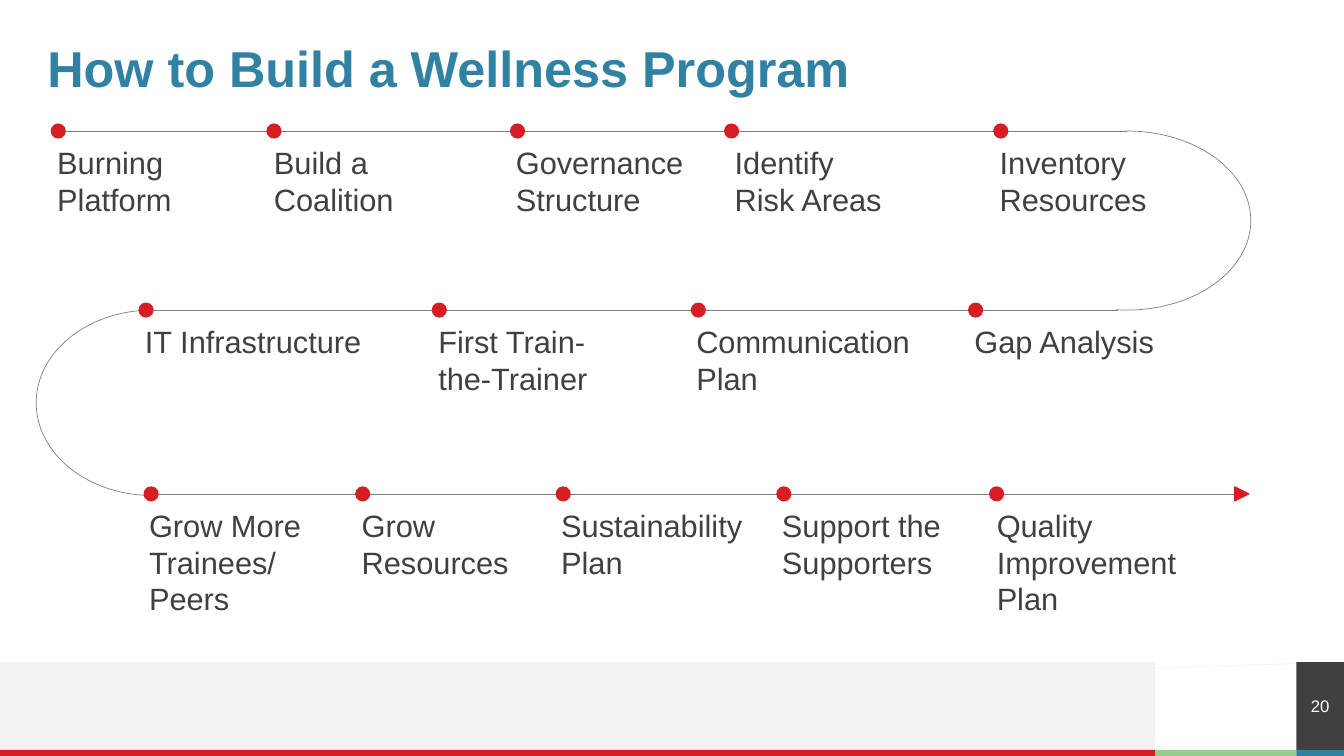
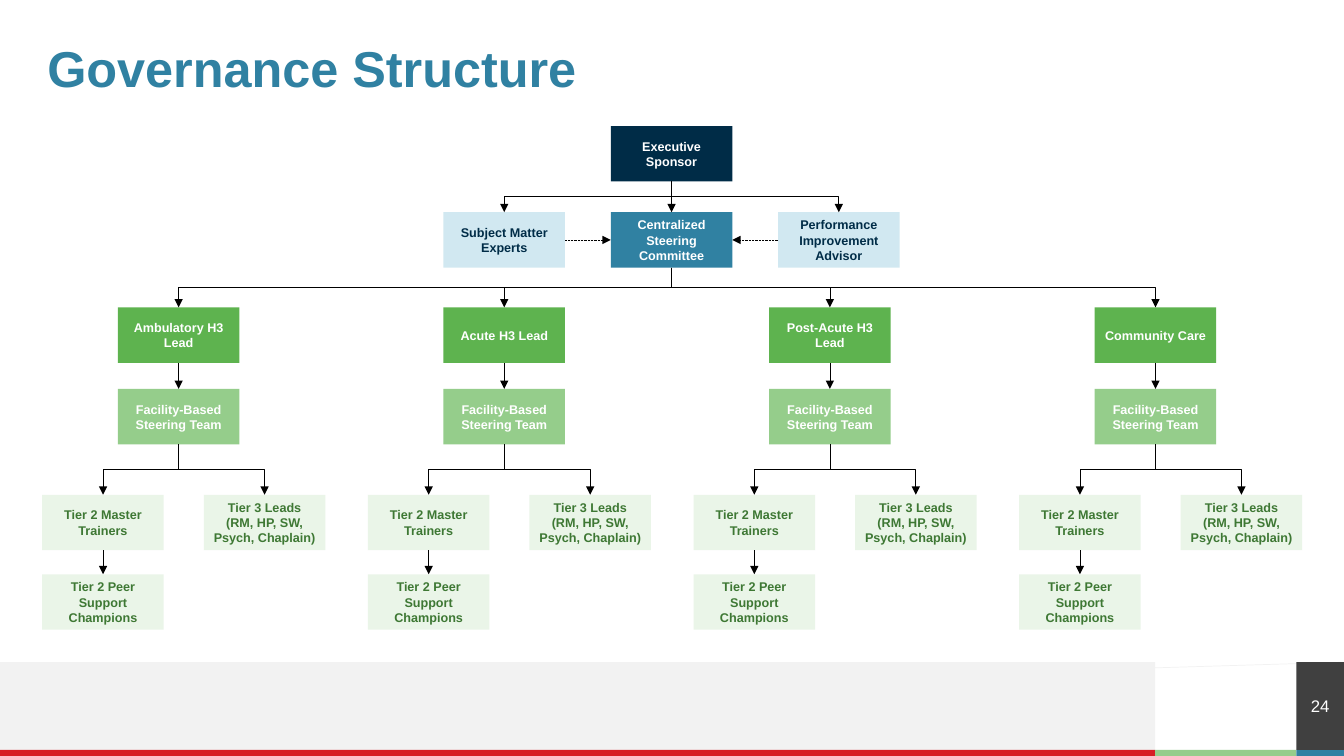
"""Builds the wellness programme roadmap and governance slides."""
from lxml.etree import SubElement
from pptx import Presentation
from pptx.dml.color import RGBColor
from pptx.enum.dml import MSO_LINE
from pptx.enum.shapes import MSO_CONNECTOR, MSO_SHAPE
from pptx.enum.text import MSO_ANCHOR, PP_ALIGN
from pptx.oxml.ns import qn
from pptx.util import Pt

FONT = "Arial"
WHITE = RGBColor(0xFF, 0xFF, 0xFF)
BLACK = RGBColor(0x00, 0x00, 0x00)
CHARCOAL = RGBColor(0x40, 0x40, 0x40)
GREY = RGBColor(0x80, 0x80, 0x80)
PALE_GREY = RGBColor(0xF2, 0xF2, 0xF2)
RED = RGBColor(0xD7, 0x1D, 0x24)
NAVY = RGBColor(0x00, 0x2C, 0x47)
BLUE = RGBColor(0x30, 0x81, 0xA2)
PALE_BLUE = RGBColor(0xD1, 0xE8, 0xF1)
GREEN = RGBColor(0x5E, 0xB3, 0x4F)
LIGHT_GREEN = RGBColor(0x95, 0xCD, 0x8B)
PALE_GREEN = RGBColor(0xEA, 0xF5, 0xE8)
DARK_GREEN = RGBColor(0x3E, 0x78, 0x34)

SLIDE_WIDTH, SLIDE_HEIGHT = 960, 540
FOOTER_TOP, STRIPE_TOP = 473, 535.7
FOOTER_SPLIT, NUMBER_LEFT = 825.1, 925.9

DOT_SIZE = 9.8
LABEL_DROP = 5.3
ROADMAP = [
    (93.6, [
        (36.7, 33.8, 195, "Burning\nPlatform"),
        (190.8, 188.6, 146, "Build a Coalition"),
        (364.8, 361.4, 171, "Governance Structure"),
        (517.7, 517.7, 131, "Identify\nRisk Areas"),
        (710, 707, 195, "Inventory\nResources"),
    ]),
    (221.5, [
        (99.4, 96.5, 197, "IT Infrastructure"),
        (308.9, 306, 127, "First Train-the-Trainer"),
        (493.9, 490.3, 172, "Communication\nPlan"),
        (692, 689, 176, "Gap Analysis"),
    ]),
    (352.8, [
        (103, 99.4, 124, "Grow More\nTrainees/ Peers"),
        (254.2, 251.3, 158, "Grow Resources"),
        (397.4, 393.8, 161, "Sustainability Plan"),
        (555, 551.5, 147, "Support the Supporters"),
        (707, 704.9, 156, "Quality Improvement Plan"),
    ]),
]

UNIT_WIDTH, UNIT_HEIGHT = 86.8, 39.6
SPONSOR_LEFT, ADVISOR_STEP = 436.3, 119.5
FIRST_BRANCH, BRANCH_STEP = 84.2, 232.6
SPONSOR_TOP, STEERING_TOP = 90, 151.6
LEAD_TOP, TEAM_TOP, TIER_TOP, PEER_TOP = 219.6, 277.8, 353.4, 410.2
TRAINER_SHIFT, TIER3_SHIFT = -54, 61.4
LEADS = ["Ambulatory H3 Lead", "Acute H3 Lead", "Post-Acute H3 Lead", "Community Care"]


def add_block(slide, left, top, width, height, fill, outline=None, preset=MSO_SHAPE.RECTANGLE):
    """Adds a flat preset shape."""
    block = slide.shapes.add_shape(preset, Pt(left), Pt(top), Pt(width), Pt(height))
    block.shadow.inherit = False
    if fill is None:
        block.fill.background()
    else:
        block.fill.solid()
        block.fill.fore_color.rgb = fill
    if outline is None:
        block.line.fill.background()
    else:
        block.line.color.rgb = outline
        block.line.width = Pt(1)
    return block


def write(frame, text, size, color, bold=False, align=PP_ALIGN.LEFT):
    """Fills a text frame and formats its paragraphs."""
    frame.word_wrap = True
    frame.text = text
    for paragraph in frame.paragraphs:
        paragraph.alignment = align
        for run in paragraph.runs:
            run.font.name = FONT
            run.font.size = Pt(size)
            run.font.bold = bold
            run.font.color.rgb = color


def clear_margins(frame):
    """Removes the insets and centres the text vertically."""
    frame.margin_left = frame.margin_right = frame.margin_top = frame.margin_bottom = 0
    frame.vertical_anchor = MSO_ANCHOR.MIDDLE


def style_line(connector, color):
    """Makes a connector thin and free of shadow."""
    connector.line.color.rgb = color
    connector.line.width = Pt(0.5)
    SubElement(connector.element.spPr, qn("a:effectLst"))


def add_line(slide, x1, y1, x2, y2, color):
    """Draws a plain straight line."""
    line = slide.shapes.add_connector(MSO_CONNECTOR.STRAIGHT, Pt(x1), Pt(y1), Pt(x2), Pt(y2))
    style_line(line, color)


def add_arc(slide, left, top, width, height, start, end, mirrored=False):
    """Draws an arc between two angles in degrees."""
    arc = add_block(slide, left, top, width, height, None, GREY, MSO_SHAPE.ARC)
    arc.line.width = Pt(0.5)
    arc.adjustments[0] = start * 0.6
    arc.adjustments[1] = end * 0.6
    if mirrored:
        arc.element.spPr.find(qn("a:xfrm")).set("flipH", "1")


def start_slide(deck, title, number):
    """Adds a slide with its title, footer bands and number."""
    slide = deck.slides.add_slide(deck.slide_layouts[6])
    stripe_height = SLIDE_HEIGHT - STRIPE_TOP
    footer_height = STRIPE_TOP - FOOTER_TOP
    edges = [0, FOOTER_SPLIT, NUMBER_LEFT, SLIDE_WIDTH]
    add_block(slide, 0, FOOTER_TOP, FOOTER_SPLIT, footer_height, PALE_GREY)
    for left, right, color in zip(edges, edges[1:], [RED, LIGHT_GREEN, BLUE]):
        add_block(slide, left, STRIPE_TOP, right - left, stripe_height, color)
    add_line(slide, SLIDE_WIDTH, FOOTER_TOP, 0, 501.8, PALE_GREY)

    page = add_block(slide, NUMBER_LEFT, FOOTER_TOP, SLIDE_WIDTH - NUMBER_LEFT, footer_height, CHARCOAL)
    clear_margins(page.text_frame)
    write(page.text_frame, str(number), 12, WHITE, align=PP_ALIGN.CENTER)

    heading = slide.shapes.add_textbox(Pt(33.8), Pt(33.8), Pt(892), Pt(33.8)).text_frame
    clear_margins(heading)
    write(heading, title, 36, BLUE, bold=True)
    heading.paragraphs[0].line_spacing = 0.9
    return slide


def add_step(slide, line_y, dot_left, label_left, label_width, label):
    """Adds a roadmap dot and the label under it."""
    add_block(slide, dot_left, line_y - DOT_SIZE / 2, DOT_SIZE, DOT_SIZE, RED, RED, MSO_SHAPE.OVAL)
    height = 60.5
    caption = slide.shapes.add_textbox(Pt(label_left), Pt(line_y + LABEL_DROP), Pt(label_width), Pt(height))
    write(caption.text_frame, label, 22, CHARCOAL)


def add_unit(slide, left, top, label, fill, color=WHITE):
    """Adds one box of the organisation chart."""
    unit = add_block(slide, left, top, UNIT_WIDTH, UNIT_HEIGHT, fill)
    unit.text_frame.vertical_anchor = MSO_ANCHOR.MIDDLE
    write(unit.text_frame, label, 9, color, bold=True, align=PP_ALIGN.CENTER)
    return unit


def turn_down(elbow):
    """Turns an elbow so that it leaves and arrives vertically."""
    dx, dy = elbow.end_x - elbow.begin_x, elbow.end_y - elbow.begin_y
    center_x, center_y = elbow.begin_x + dx // 2, elbow.begin_y + dy // 2
    elbow.width, elbow.height = dy, abs(dx)
    elbow.left, elbow.top = center_x - dy // 2, center_y - abs(dx) // 2
    frame = elbow.element.spPr.find(qn("a:xfrm"))
    frame.set("rot", "5400000" if dx < 0 else "16200000")
    frame.set("flipH", "0" if dx < 0 else "1")


def connect(slide, source, target, sides=(2, 0), dotted=False):
    """Joins two units with an arrow."""
    straight = dotted or source.left == target.left
    kind = MSO_CONNECTOR.STRAIGHT if straight else MSO_CONNECTOR.ELBOW
    arrow = slide.shapes.add_connector(kind, Pt(0), Pt(0), Pt(0), Pt(0))
    arrow.begin_connect(source, sides[0])
    arrow.end_connect(target, sides[1])
    if not straight:
        turn_down(arrow)
    style_line(arrow, BLACK)
    if dotted:
        arrow.line.dash_style = MSO_LINE.ROUND_DOT
    SubElement(arrow.element.spPr.find(qn("a:ln")), qn("a:tailEnd"), type="triangle")


def add_branch(slide, steering, left, lead_label):
    """Adds a lead with the teams below and their arrows."""
    lead = add_unit(slide, left, LEAD_TOP, lead_label, GREEN)
    team = add_unit(slide, left, TEAM_TOP, "Facility-Based Steering Team", LIGHT_GREEN)
    trainers, tier3, peers = [
        add_unit(slide, left + shift, top, label, PALE_GREEN, DARK_GREEN)
        for shift, top, label in [
            (TRAINER_SHIFT, TIER_TOP, "Tier 2 Master Trainers"),
            (TIER3_SHIFT, TIER_TOP, "Tier 3 Leads (RM, HP, SW, Psych, Chaplain)"),
            (TRAINER_SHIFT, PEER_TOP, "Tier 2 Peer Support Champions"),
        ]
    ]
    for source, target in [(steering, lead), (lead, team), (team, trainers), (team, tier3), (trainers, peers)]:
        connect(slide, source, target)


def build_roadmap(deck):
    """Builds the winding roadmap slide."""
    slide = start_slide(deck, "How to Build a Wellness Program", 20)
    top, middle, bottom = [line_y for line_y, _ in ROADMAP]
    add_arc(slide, 25.9, middle, 165.6, 132.4, 269, 91, mirrored=True)
    add_arc(slide, 716.4, top, 177.1, middle - top, 269, 97)
    for x1, x2, line_y in [(40.3, 805, top), (109.4, 798.5, middle), (110.9, 882, bottom)]:
        add_line(slide, x1, line_y, x2, line_y, GREY)
    tip = add_block(slide, 882, bottom - DOT_SIZE / 2, DOT_SIZE, DOT_SIZE, RED, RED, MSO_SHAPE.ISOSCELES_TRIANGLE)
    tip.rotation = 90
    for line_y, steps in ROADMAP:
        for step in steps:
            add_step(slide, line_y, *step)


def build_governance(deck):
    """Builds the organisation chart slide."""
    slide = start_slide(deck, "Governance Structure", 24)
    sponsor = add_unit(slide, SPONSOR_LEFT, SPONSOR_TOP, "Executive Sponsor", NAVY)
    steering = add_unit(slide, SPONSOR_LEFT, STEERING_TOP, "Centralized Steering Committee", BLUE)
    connect(slide, sponsor, steering)
    for shift, label, sides in [
        (-ADVISOR_STEP, "Subject Matter Experts", (3, 1)),
        (ADVISOR_STEP, "Performance Improvement Advisor", (1, 3)),
    ]:
        advisor = add_unit(slide, SPONSOR_LEFT + shift, STEERING_TOP, label, PALE_BLUE, NAVY)
        connect(slide, sponsor, advisor)
        connect(slide, advisor, steering, sides, dotted=True)
    for index, lead_label in enumerate(LEADS):
        add_branch(slide, steering, FIRST_BRANCH + index * BRANCH_STEP, lead_label)


def main():
    """Builds and saves the deck."""
    deck = Presentation()
    deck.slide_width, deck.slide_height = Pt(SLIDE_WIDTH), Pt(SLIDE_HEIGHT)
    build_roadmap(deck)
    build_governance(deck)
    deck.save("out.pptx")


if __name__ == "__main__":
    main()
